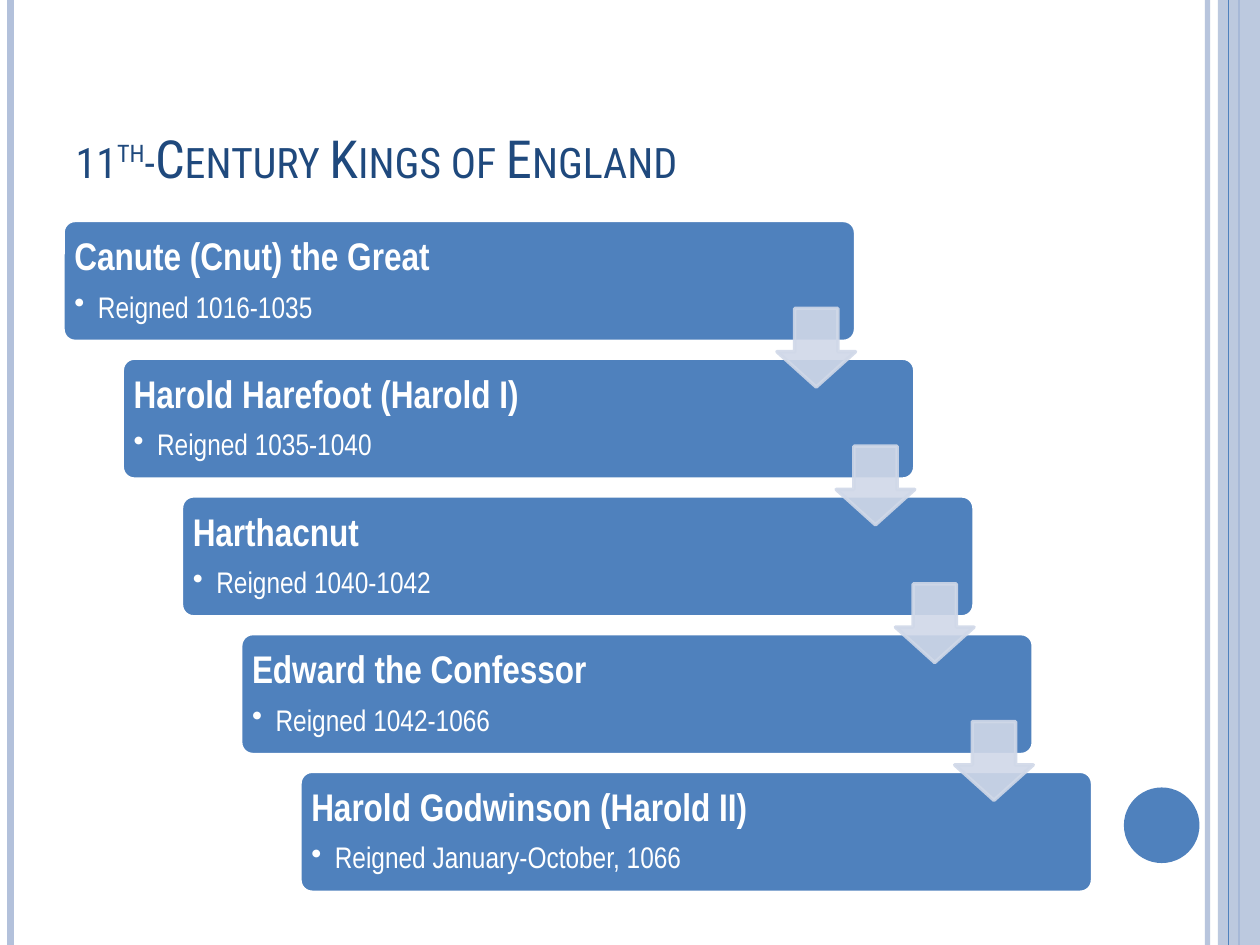
import pptx
import pptx.util
import pptx.dml.color
import pptx.enum.shapes
import pptx.enum.text
import pptx.oxml
import pptx.oxml.ns

Pt = pptx.util.Pt
SHAPE = pptx.enum.shapes.MSO_SHAPE
ANCHOR = pptx.enum.text.MSO_ANCHOR
HUES = {"blue": "4F81BD", "navy": "1F497D", "pale": "B3C1DB", "mist": "D0D8E8", "white": "FFFFFF"}
KINGS = [
    ("Canute (Cnut) the Great", "Reigned 1016-1035"),
    ("Harold Harefoot (Harold I)", "Reigned 1035-1040"),
    ("Harthacnut", "Reigned 1040-1042"),
    ("Edward the Confessor", "Reigned 1042-1066"),
    ("Harold Godwinson (Harold II)", "Reigned January-October, 1066"),
]


def add_tag(node, tag, **attrs):
    """Append an empty DrawingML element with the given attributes."""
    child = pptx.oxml.parse_xml(f"<a:{tag} {pptx.oxml.ns.nsdecls('a')}/>")
    for key, value in attrs.items():
        child.set(key, str(value))
    node.append(child)


def tint(fill, hue, alpha=100):
    """Make a fill solid, with an opacity in percent."""
    fill.solid()
    fill.fore_color.rgb = pptx.dml.color.RGBColor.from_string(HUES[hue])
    if alpha < 100:
        add_tag(fill._xPr.find(".//" + pptx.oxml.ns.qn("a:srgbClr")), "alpha", val=alpha * 1000)


def add_form(slide, kind, box, hue, edge=None, alpha=100, adjust=()):
    """Add a preset shape in the box, with an optional 2 pt edge."""
    form = slide.shapes.add_shape(kind, *map(Pt, box))
    form.shadow.inherit = False
    tint(form.fill, hue, alpha)
    if edge:
        form.line.width = Pt(2)
        tint(form.line.fill, edge, alpha)
    else:
        form.line.fill.background()
    for index, value in enumerate(adjust):
        form.adjustments[index] = value
    return form


def add_rule(slide, x, high, hue, width, alpha=100):
    """Add a vertical rule down the slide."""
    rule = slide.shapes.add_connector(
        pptx.enum.shapes.MSO_CONNECTOR.STRAIGHT, Pt(x), Pt(0), Pt(x), Pt(high))
    rule.line.width = Pt(width)
    tint(rule.line.fill, hue, alpha)
    add_tag(rule._element.spPr, "effectLst")


def add_run(para, text, size, face, hue, bold=False):
    """Add a formatted run to a paragraph."""
    run = para.add_run()
    run.text = text
    run.font.size, run.font.name, run.font.bold = Pt(size), face, bold
    tint(run.font.fill, hue)
    return run


def add_frame(slide, wide, high):
    """Draw the rules, side band and disc at the slide's edges."""
    add_rule(slide, wide - 30, high, "pale", 3, 93)
    add_rule(slide, 6, high, "pale", 4.5)
    add_rule(slide, wide - 12, high, "blue", 1.5)
    add_form(slide, SHAPE.RECTANGLE, (wide - 24, 0, 24, high), "pale", alpha=87)
    add_rule(slide, wide - 18, high, "blue", 0.75)
    add_form(slide, SHAPE.OVAL, (wide - 77.76, high - 90, 43.2, 43.2), "blue")


def set_title(slide, box):
    """Place and fill the title in small capitals."""
    title = slide.shapes.title
    title.left, title.top, title.width, title.height = map(Pt, box)
    frame = title.text_frame
    frame.word_wrap = True
    frame.vertical_anchor = ANCHOR.BOTTOM
    para = frame.paragraphs[0]
    para.alignment = pptx.enum.text.PP_ALIGN.LEFT
    for text, rise in (("11", 0), ("th", 30000), ("-Century Kings of England", 0)):
        props = add_run(para, text, 30, "Roboto Condensed", "navy").font._element
        props.set("cap", "small")
        if rise:
            props.set("baseline", str(rise))


def add_card(slide, box, name, reign):
    """Add one king's card with his name and reign."""
    left, top, wide, high = box
    add_form(slide, SHAPE.ROUNDED_RECTANGLE, box, "blue", "white", adjust=(0.1,))
    label = slide.shapes.add_textbox(Pt(left), Pt(top), Pt(wide - 78.5), Pt(high))
    frame = label.text_frame
    frame.word_wrap = True
    frame.vertical_anchor = ANCHOR.MIDDLE
    for side in ("left", "top", "right", "bottom"):
        setattr(frame, "margin_" + side, Pt(6.5))
    head, note = frame.paragraphs[0], frame.add_paragraph()
    for para, after in ((head, 7.7), (note, 2.5)):
        para.alignment = pptx.enum.text.PP_ALIGN.LEFT
        para.line_spacing, para.space_after = 0.9, Pt(after)
    add_run(head, name, 22, "Arial Narrow", "white", True)
    note.level = 1
    props = note._p.get_or_add_pPr()
    props.set("marL", str(Pt(13.5)))
    props.set("indent", str(Pt(-13.5)))
    add_tag(props, "buChar", char="•")
    add_run(note, reign, 17, "Arial Narrow", "white")


def add_steps(slide, box, kings):
    """Add the staircase of cards and the arrows that join them."""
    left, top, wide, high = box
    card_w, card_h, arrow = 452.9, 69.1, 44.9
    gaps = len(kings) - 1
    step_x, step_y = (wide - card_w) / gaps, (high - card_h) / gaps
    spots = [(left + i * step_x, top + i * step_y) for i in range(len(kings))]
    for (x, y), king in zip(spots, kings):
        add_card(slide, (x, y, card_w, card_h), *king)
    for x, y in spots[:-1]:
        add_form(slide, SHAPE.DOWN_ARROW, (x + card_w - arrow, y + 50.3, arrow, arrow),
                 "mist", "mist", 90, (0.55, 0.45))


def main():
    """Build and save the slide."""
    deck = pptx.Presentation()
    wide, high = 720, 540
    deck.slide_width, deck.slide_height = Pt(wide), Pt(high)
    slide = deck.slides.add_slide(deck.slide_layouts[5])
    add_frame(slide, wide, high)
    set_title(slide, (36, 21.6, 588, 90))
    add_steps(slide, (36, 126, 588.3, 383.9), KINGS)
    deck.save("out.pptx")


if __name__ == "__main__":
    main()
